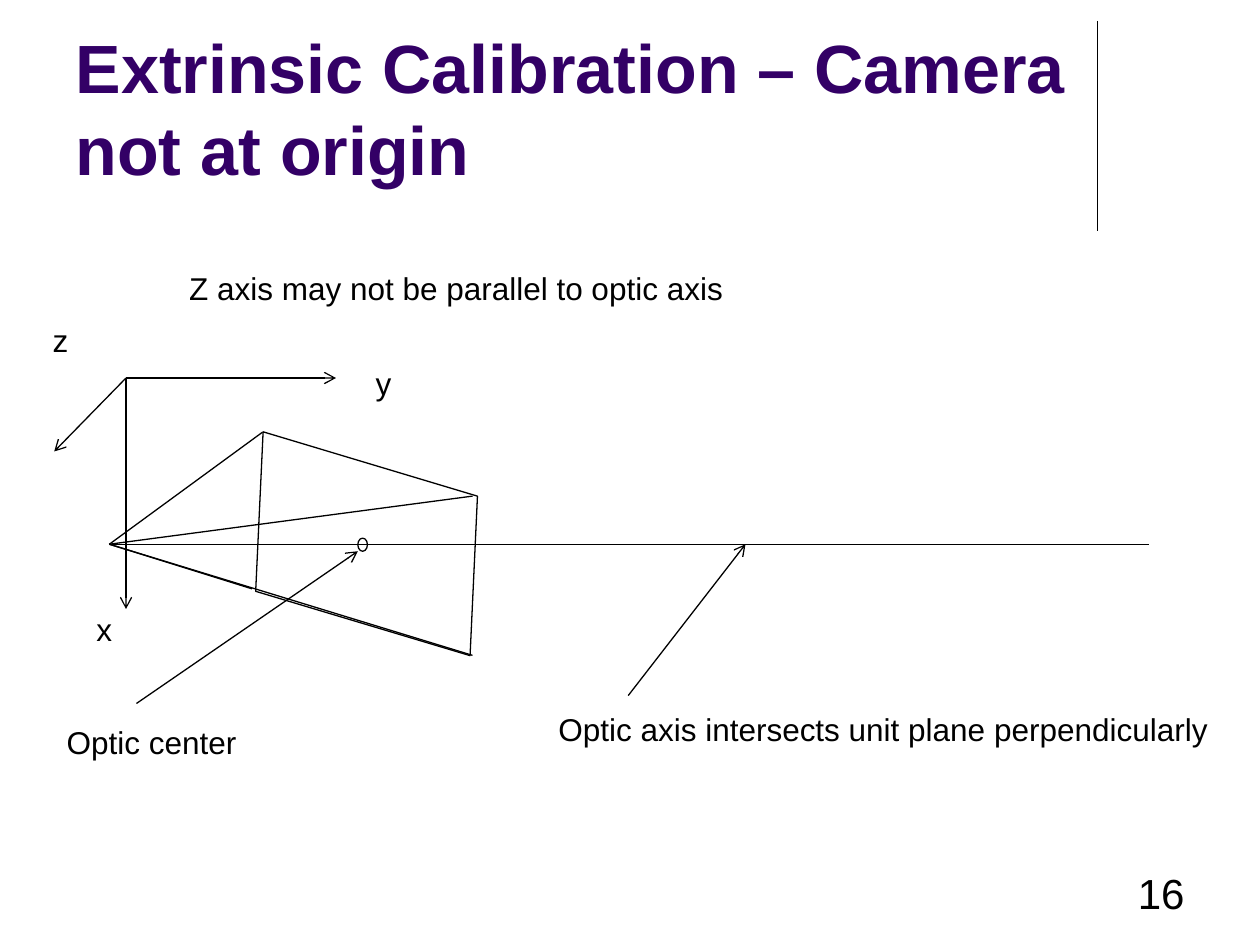
from pptx import Presentation
from pptx.dml.color import RGBColor
from pptx.enum import shapes, text
from pptx.oxml import ns, xmlchemy
from pptx.util import Pt

BLACK = RGBColor(0x00, 0x00, 0x00)
PURPLE = RGBColor(0x33, 0x00, 0x66)
FONT = "Arial"
LINE_WIDTH = 0.75

# All lengths in points.
TITLE = "Extrinsic Calibration – Camera not at origin"
LABELS = [  # wording, left, top, width
    ("Optic center", 31, 409.5, 112.3),
    ("Optic axis intersects unit plane perpendicularly", 312, 402, 389.5),
    ("x", 48, 345, 24),
    ("y", 207.5, 204.5, 24),
    ("z", 23, 180, 24),
    ("Z axis may not be parallel to optic axis", 101, 150, 322.5),
]
LABEL_HEIGHT = 29

TITLE_RULE = ((627, 12), (627, 132))
APEX = (62.5, 311)
RAY_ENDS = [(150, 247), (144, 336.5), (270, 374.5), (270, 283.5), (656.5, 311)]
ORIGIN = (72, 216)
AXIS_ENDS = [(31, 258), (192, 216), (72, 348)]
POINTERS = [((78, 402), (204.5, 315)), ((359, 397.5), (426, 311))]
PLANE = (134.5, 266.5, 150, 88.5)
PLANE_ANGLE = 16.7
OPTIC_CENTER = (204.5, 307.5, 5.5, 7.5)


def add_line(page, start, end, arrow=False):
    line = page.shapes.add_connector(
        shapes.MSO_CONNECTOR.STRAIGHT, *map(Pt, (*start, *end)))
    line.line.color.rgb = BLACK
    line.line.width = Pt(LINE_WIDTH)
    properties = line.element.spPr
    if arrow:
        tail = xmlchemy.OxmlElement("a:tailEnd")
        tail.set("type", "arrow")
        properties.find(ns.qn("a:ln")).append(tail)
    properties.append(xmlchemy.OxmlElement("a:effectLst"))


def add_outline(page, kind, frame):
    shape = page.shapes.add_shape(kind, *map(Pt, frame))
    shape.shadow.inherit = False
    shape.fill.background()
    shape.line.color.rgb = BLACK
    shape.line.width = Pt(LINE_WIDTH)
    return shape


def write(para, wording, size, color=BLACK, bold=False):
    span = para.add_run()
    span.text = wording
    span.font.name = FONT
    span.font.size = Pt(size)
    span.font.bold = bold
    span.font.color.rgb = color


def add_text(page, wording, frame, size, wrap=False):
    box = page.shapes.add_textbox(*map(Pt, frame))
    box.text_frame.word_wrap = wrap
    para = box.text_frame.paragraphs[0]
    write(para, wording, size)
    return para


deck = Presentation()
deck.slide_width, deck.slide_height = Pt(720), Pt(540)
page = deck.slides.add_slide(deck.slide_layouts[5])

title = page.shapes.title
title.left, title.top, title.width, title.height = map(Pt, (36, 9.5, 594, 102))
title.text_frame.auto_size = text.MSO_AUTO_SIZE.NONE
title.text_frame.vertical_anchor = text.MSO_ANCHOR.BOTTOM
heading = title.text_frame.paragraphs[0]
heading.alignment = text.PP_ALIGN.LEFT
write(heading, TITLE, 39, PURPLE, bold=True)
add_line(page, *TITLE_RULE)

number = add_text(page, "16", (516, 492, 168, 36), 24, wrap=True)
number.alignment = text.PP_ALIGN.RIGHT

plane = add_outline(page, shapes.MSO_SHAPE.PARALLELOGRAM, PLANE)
plane.rotation = PLANE_ANGLE
plane.element.spPr.get_or_add_xfrm().set("flipV", "1")
for end in RAY_ENDS:
    add_line(page, APEX, end)
add_outline(page, shapes.MSO_SHAPE.OVAL, OPTIC_CENTER)

for start, end in POINTERS + [(ORIGIN, end) for end in AXIS_ENDS]:
    add_line(page, start, end, arrow=True)
for wording, left, top, width in LABELS:
    add_text(page, wording, (left, top, width, LABEL_HEIGHT), 18)

deck.save("out.pptx")
